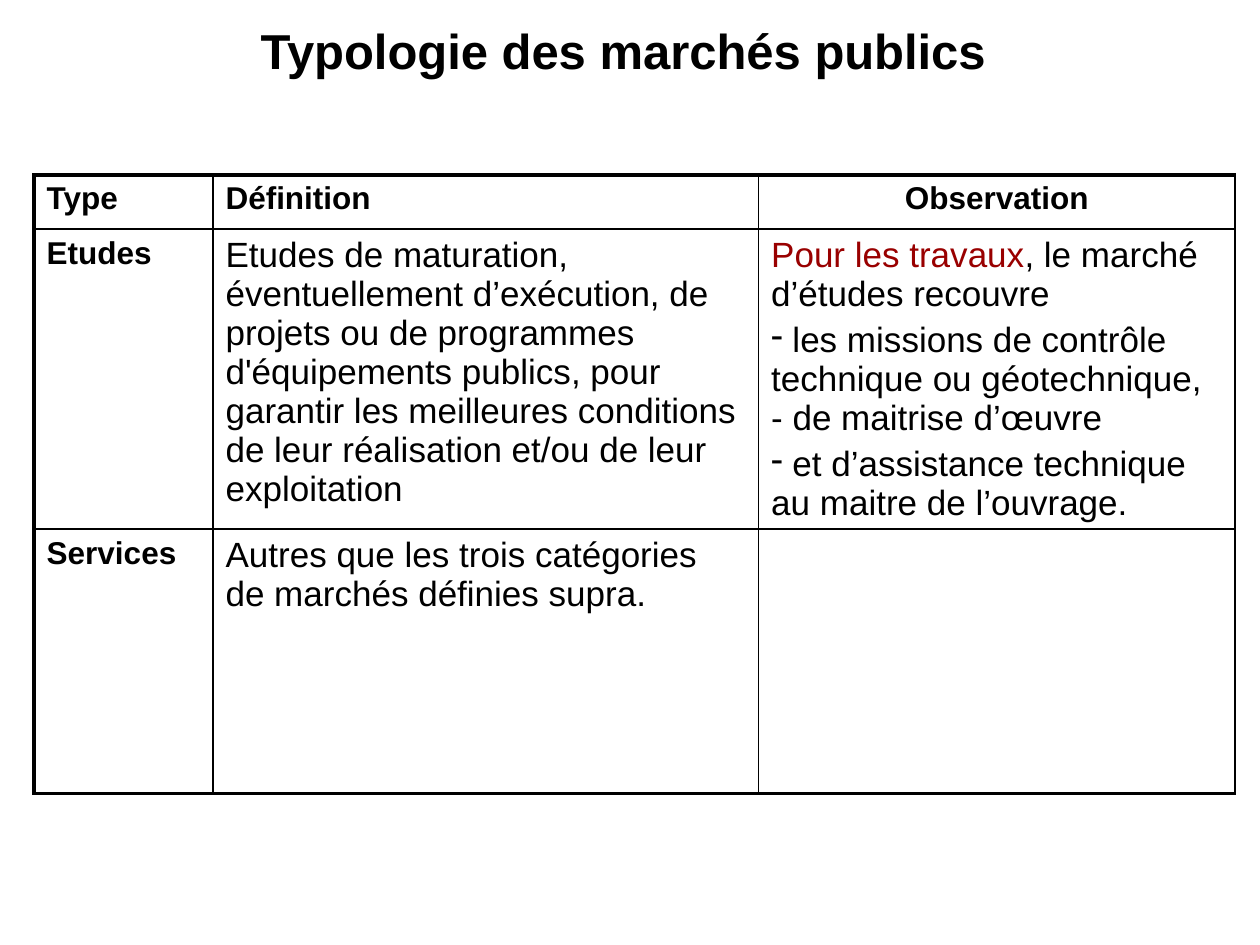
from pptx import Presentation
from pptx.dml.color import RGBColor
from pptx.enum.text import MSO_ANCHOR, PP_ALIGN as AL
from pptx.oxml.xmlchemy import OxmlElement as Ox
from pptx.util import Pt

THEME = {
    "font": "Arial", "ink": "000000", "accent": "990000",
    "title": 28, "label": 18, "body": 20, "thin": 1, "thick": 2.25,
}


def add_run(p, text, size, bold=False, color=THEME["ink"]):
    r = p.add_run()
    r.text = text
    for name, value in {"name": THEME["font"], "size": Pt(size), "bold": bold}.items():
        setattr(r.font, name, value)
    r.font.color.rgb = RGBColor.from_string(color)


def set_border(cell, side, width):
    """Draw one side of a cell: L, R, T or B."""
    ln = Ox(f"a:ln{side}")
    ln.set("w", str(Pt(width)))
    fill, clr = Ox("a:solidFill"), Ox("a:srgbClr")
    clr.set("val", THEME["ink"])
    fill.append(clr)
    ln.append(fill)
    cell._tc.get_or_add_tcPr().append(ln)


prs = Presentation()
prs.slide_width, prs.slide_height = Pt(720), Pt(540)
s = prs.slides.add_slide(prs.slide_layouts[5])

# Title
title = s.shapes.title
title_box = {"left": 62, "top": -6, "width": 646.5, "height": 56.5}
for name, value in title_box.items():
    setattr(title, name, Pt(value))
tf = title.text_frame
title_format = {"vertical_anchor": MSO_ANCHOR.BOTTOM, "word_wrap": True,
                "margin_left": Pt(87), "margin_bottom": Pt(5)}
for name, value in title_format.items():
    setattr(tf, name, value)
p = tf.paragraphs[0]
p.alignment = AL.LEFT
add_run(p, "Typologie des marchés publics", THEME["title"], True)

# Table: each cell is a list of paragraphs, each paragraph a list of (text, colour)
INK, ACCENT = THEME["ink"], THEME["accent"]
rows = [
    [[[("Type", INK)]], [[("Définition", INK)]], [[("Observation", INK)]]],
    [
        [[("Etudes", INK)]],
        [[("Etudes de maturation, éventuellement d’exécution, de projets ou de "
           "programmes d'équipements publics, pour garantir les meilleures "
           "conditions de leur réalisation et/ou de leur exploitation", INK)]],
        [
            [("Pour les travaux", ACCENT), (", le marché d’études recouvre", INK)],
            [(" les missions de contrôle technique ou géotechnique, "
              "- de maitrise d’œuvre", INK)],
            [(" et d’assistance technique au maitre de l’ouvrage.", INK)],
        ],
    ],
    [
        [[("Services", INK)]],
        [[("Autres que les trois catégories de marchés définies supra.", INK)]],
        [],
    ],
]
col_widths = [102.2, 311.8, 272.2]
row_heights = [31, 171, 151.2]

table = s.shapes.add_table(
    len(rows), len(col_widths), Pt(19.5), Pt(100),
    Pt(sum(col_widths)), Pt(sum(row_heights))).table
table.first_row = table.horz_banding = False
for col, width in zip(table.columns, col_widths):
    col.width = Pt(width)
for row, height in zip(table.rows, row_heights):
    row.height = Pt(height)

for i, row in enumerate(rows):
    for j, paragraphs in enumerate(row):
        cell = table.cell(i, j)
        is_label = i == 0 or j == 0
        size = THEME["label" if is_label else "body"]
        thick_sides = {"L": j == 0, "R": False, "T": i == 0, "B": i == len(rows) - 1}
        for side, thick in thick_sides.items():
            set_border(cell, side, THEME["thick" if thick else "thin"])
        cell.fill.background()

        tf = cell.text_frame
        for k, runs in enumerate(paragraphs):
            p = tf.add_paragraph() if k else tf.paragraphs[0]
            p.alignment = AL.CENTER if (i, j) == (0, 2) else AL.LEFT
            if k:  # dash items follow the opening paragraph
                p.space_before = Pt(4)
                bullet = Ox("a:buChar")
                bullet.set("char", "-")
                p._p.get_or_add_pPr().append(bullet)
            for text, color in runs:
                add_run(p, text, size, is_label, color)

prs.save("out.pptx")
